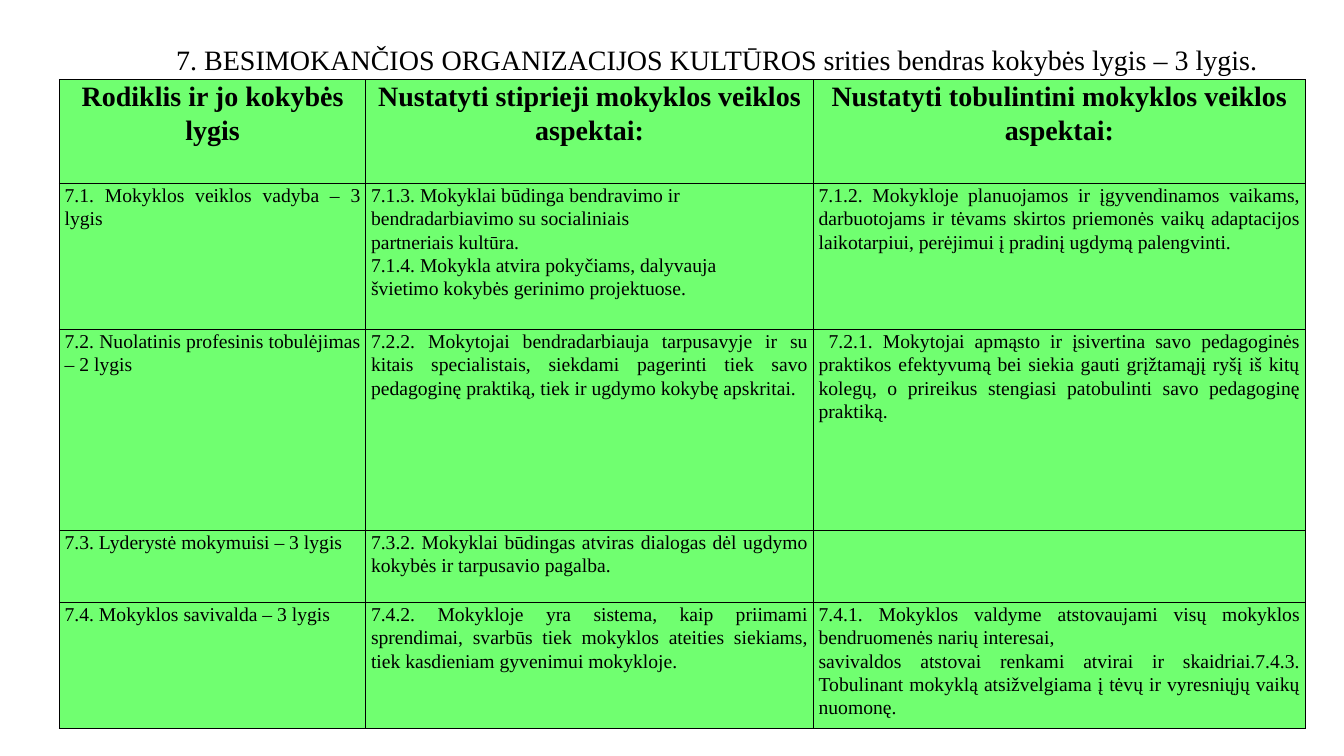
from dataclasses import dataclass

import pptx
import pptx.util
from pptx.dml.color import RGBColor
from pptx.enum.text import MSO_ANCHOR, PP_ALIGN
from pptx.oxml import parse_xml
from pptx.oxml.ns import nsdecls
from pptx.util import Cm, Pt


@dataclass(frozen=True)
class Theme:
    font: str = "Times New Roman"
    ink: str = "000000"
    cell: str = "70FF70"
    heading: int = 20
    body: int = 14
    border: float = 1


THEME = Theme()

TITLE = "7. BESIMOKANČIOS ORGANIZACIJOS KULTŪROS srities bendras kokybės lygis – 3 lygis."
HEADERS = [
    "Rodiklis ir jo kokybės lygis",
    "Nustatyti stiprieji mokyklos veiklos aspektai:",
    "Nustatyti tobulintini mokyklos veiklos aspektai:",
]
INDICATORS = [
    [
        "7.1. Mokyklos veiklos vadyba – 3 lygis",
        "7.1.3. Mokyklai būdinga bendravimo ir\n"
        "bendradarbiavimo su socialiniais\n"
        "partneriais kultūra.\n"
        "7.1.4. Mokykla atvira pokyčiams, dalyvauja\n"
        "švietimo kokybės gerinimo projektuose.",
        "7.1.2. Mokykloje planuojamos ir įgyvendinamos vaikams, darbuotojams ir tėvams "
        "skirtos priemonės vaikų adaptacijos laikotarpiui, perėjimui į pradinį ugdymą palengvinti.",
    ],
    [
        "7.2. Nuolatinis profesinis tobulėjimas – 2 lygis",
        "7.2.2. Mokytojai bendradarbiauja tarpusavyje ir su kitais specialistais, siekdami "
        "pagerinti tiek savo pedagoginę praktiką, tiek ir ugdymo kokybę apskritai.",
        " 7.2.1. Mokytojai apmąsto ir įsivertina savo pedagoginės praktikos efektyvumą bei "
        "siekia gauti grįžtamąjį ryšį iš kitų kolegų, o prireikus stengiasi patobulinti savo "
        "pedagoginę praktiką.",
    ],
    [
        "7.3. Lyderystė mokymuisi – 3 lygis",
        "7.3.2. Mokyklai būdingas atviras dialogas dėl ugdymo kokybės ir tarpusavio pagalba.",
        "",
    ],
    [
        "7.4. Mokyklos savivalda – 3 lygis",
        "7.4.2. Mokykloje yra sistema, kaip priimami sprendimai, svarbūs tiek mokyklos "
        "ateities siekiams, tiek kasdieniam gyvenimui mokykloje.",
        "7.4.1. Mokyklos valdyme atstovaujami visų mokyklos bendruomenės narių interesai,\n"
        "savivaldos atstovai renkami atvirai ir skaidriai.7.4.3. Tobulinant mokyklą "
        "atsižvelgiama į tėvų ir vyresniųjų vaikų nuomonę.",
    ],
]
COLUMN_WIDTHS = [7.72, 11.28, 12.4]
ROW_HEIGHTS = [2.62, 3.68, 5.05, 1.83, 3.05]


def write_text(tf, text, size=THEME.body, bold=False, align=PP_ALIGN.JUSTIFY, spacing=1.0):
    for i, line in enumerate(text.split("\n")):
        p = tf.paragraphs[0] if i == 0 else tf.add_paragraph()
        p.alignment = align
        p.line_spacing = spacing
        p.font.size = Pt(size)
        if line:
            r = p.add_run()
            r.text = line
            r.font.name = THEME.font
            r.font.size = Pt(size)
            r.font.bold = bold
            r.font.color.rgb = RGBColor.from_string(THEME.ink)


def style_cell(cell):
    cell.margin_left = cell.margin_right = Cm(0.13)
    cell.margin_top = cell.margin_bottom = 0
    cell.vertical_anchor = MSO_ANCHOR.TOP
    tc_pr = cell._tc.get_or_add_tcPr()
    for side in ("lnL", "lnR", "lnT", "lnB"):
        tc_pr.append(parse_xml(
            f'<a:{side} {nsdecls("a")} w="{Pt(THEME.border)}"><a:solidFill>'
            f'<a:srgbClr val="{THEME.ink}"/></a:solidFill></a:{side}>'))
    cell.fill.solid()
    cell.fill.fore_color.rgb = RGBColor.from_string(THEME.cell)


def add_title(s, left, top, width, height):
    sp = s.shapes.add_textbox(Cm(left), Cm(top), Cm(width), Cm(height))
    tf = sp.text_frame
    tf.word_wrap = True
    tf.vertical_anchor = MSO_ANCHOR.TOP
    tf.margin_top = Cm(0.23)
    write_text(tf, TITLE, size=THEME.heading, align=PP_ALIGN.CENTER)


def add_indicator_table(s, left, top, widths, heights):
    table = s.shapes.add_table(
        len(heights), len(widths), Cm(left), Cm(top), Cm(sum(widths)), Cm(sum(heights))).table
    for column, width in zip(table.columns, widths):
        column.width = Cm(width)
    for row, height in zip(table.rows, heights):
        row.height = Cm(height)
    for i, texts in enumerate([HEADERS] + INDICATORS):
        for j, text in enumerate(texts):
            cell = table.cell(i, j)
            style_cell(cell)
            if i == 0:
                write_text(cell.text_frame, text, size=THEME.heading, bold=True,
                           align=PP_ALIGN.CENTER, spacing=1.07)
            else:
                write_text(cell.text_frame, text, spacing=1.07)


def main():
    prs = pptx.Presentation()
    prs.slide_width, prs.slide_height = Cm(33.87), Cm(19.05)
    s = prs.slides.add_slide(prs.slide_layouts[6])
    add_title(s, 3.99, 0.84, 28.17, 2.03)
    add_indicator_table(s, 1.5, 2.01, COLUMN_WIDTHS, ROW_HEIGHTS)
    prs.save("out.pptx")


if __name__ == "__main__":
    main()
